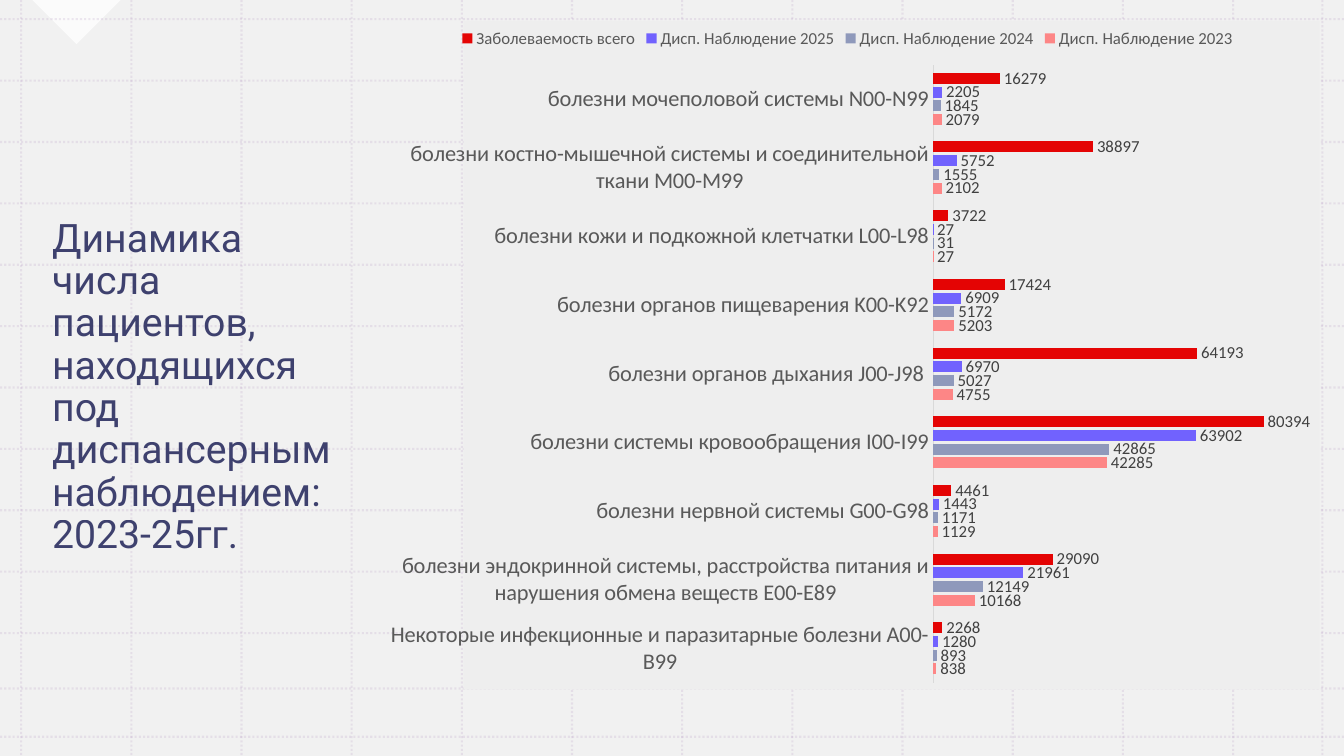
import lxml.etree
import pptx
import pptx.chart.data
import pptx.dml.color
import pptx.enum.chart
import pptx.enum.dml
import pptx.enum.shapes
import pptx.enum.text
import pptx.oxml
import pptx.oxml.ns
import pptx.util

Pt = pptx.util.Pt
qn = pptx.oxml.ns.qn

COLORS = {
    "white": "FFFFFF",
    "panel": "EEEEEE",
    "grid": "B495C2",
    "title": "12154E",
    "axis_text": "595959",
    "label_text": "404040",
    "axis_line": "D9D9D9",
}

CATEGORIES = [
    "Некоторые инфекционные и паразитарные болезни А00-В99",
    "болезни эндокринной системы, расстройства питания и нарушения обмена веществ Е00-Е89",
    "болезни нервной системы G00-G98",
    "болезни системы кровообращения I00-I99",
    "болезни органов дыхания J00-J98 ",
    "болезни органов пищеварения K00-K92",
    "болезни кожи и подкожной клетчатки L00-L98",
    "болезни костно-мышечной системы и соединительной ткани M00-M99",
    "болезни мочеполовой системы N00-N99",
]

SERIES = [
    ("Дисп. Наблюдение 2023", "FD8686", [838, 10168, 1129, 42285, 4755, 5203, 27, 2102, 2079]),
    ("Дисп. Наблюдение 2024", "8F99BB", [893, 12149, 1171, 42865, 5027, 5172, 31, 1555, 1845]),
    ("Дисп. Наблюдение 2025", "7162FE", [1280, 21961, 1443, 63902, 6970, 6909, 27, 5752, 2205]),
    ("Заболеваемость всего", "E40404", [2268, 29090, 4461, 80394, 64193, 17424, 3722, 38897, 16279]),
]

TITLE = "Динамика числа пациентов, находящихся под диспансерным наблюдением:\v2023-25гг."


class SlideBuilder:
    title_font = "Roboto"
    chart_font = "Calibri"

    def __init__(self, slide):
        self.slide = slide

    def color(self, name):
        return pptx.dml.color.RGBColor.from_string(COLORS.get(name, name))

    def set_opacity(self, element, percent):
        for color_element in element.iter(qn("a:srgbClr")):
            alpha = lxml.etree.SubElement(color_element, qn("a:alpha"))
            alpha.set("val", str(percent * 1000))

    def style_font(self, font, name, size, color):
        font.name = name
        font.size = Pt(size)
        font.color.rgb = self.color(color)

    def block(self, left, top, width, height, color, opacity=100, kind="RECTANGLE", rotation=0):
        shape = self.slide.shapes.add_shape(
            pptx.enum.shapes.MSO_SHAPE[kind], Pt(left), Pt(top), Pt(width), Pt(height))
        shape.shadow.inherit = False
        shape.rotation = rotation
        shape.fill.solid()
        shape.fill.fore_color.rgb = self.color(color)
        shape.line.fill.background()
        if opacity < 100:
            self.set_opacity(shape.fill._xPr, opacity)

    def grid_line(self, start_x, start_y, end_x, end_y):
        connector = self.slide.shapes.add_connector(
            pptx.enum.shapes.MSO_CONNECTOR.STRAIGHT,
            Pt(start_x), Pt(start_y), Pt(end_x), Pt(end_y))
        connector.line.width = Pt(1.5)
        connector.line.color.rgb = self.color("grid")
        connector.line.dash_style = pptx.enum.dml.MSO_LINE.ROUND_DOT
        properties = connector._element.spPr
        self.set_opacity(properties, 20)
        lxml.etree.SubElement(properties, qn("a:effectLst"))

    def title(self, left, top, width, height, text):
        shape = self.slide.shapes.add_textbox(Pt(left), Pt(top), Pt(width), Pt(height))
        frame = shape.text_frame
        frame.word_wrap = True
        frame.vertical_anchor = pptx.enum.text.MSO_ANCHOR.MIDDLE
        frame.text = text
        paragraph = frame.paragraphs[0]
        paragraph.line_spacing = 0.9
        for run in paragraph.runs:
            self.style_font(run.font, self.title_font, 28, "title")
        self.set_opacity(paragraph._p, 80)

    def place_plot(self, chart, x, y, w, h):
        plot_area = chart._chartSpace.chart.plotArea
        for old_layout in plot_area.findall(qn("c:layout")):
            plot_area.remove(old_layout)
        layout = lxml.etree.Element(qn("c:layout"))
        manual = lxml.etree.SubElement(layout, qn("c:manualLayout"))
        settings = {"layoutTarget": "inner", "xMode": "edge", "yMode": "edge",
                    "x": x, "y": y, "w": w, "h": h}
        for name, value in settings.items():
            lxml.etree.SubElement(manual, qn("c:" + name)).set("val", str(value))
        plot_area.insert(0, layout)

    def bar_chart(self, left, top, width, height):
        data = pptx.chart.data.CategoryChartData()
        data.categories = CATEGORIES
        for name, _, values in SERIES:
            data.add_series(name, values)
        chart = self.slide.shapes.add_chart(
            pptx.enum.chart.XL_CHART_TYPE.BAR_CLUSTERED,
            Pt(left), Pt(top), Pt(width), Pt(height), data).chart
        self.style_font(chart.font, self.chart_font, 12, "000000")
        chart.has_title = False
        chart.has_legend = True
        chart.legend.position = pptx.enum.chart.XL_LEGEND_POSITION.TOP
        chart.legend.include_in_layout = False
        self.style_font(chart.legend.font, self.chart_font, 12, "axis_text")

        plot = chart.plots[0]
        plot.vary_by_categories = False
        plot.gap_width = 150
        plot.overlap = -25
        for series, (_, color, _) in zip(plot.series, SERIES):
            series.format.fill.solid()
            series.format.fill.fore_color.rgb = self.color(color)
            series.invert_if_negative = False
            labels = series.data_labels
            labels.show_value = True
            labels.position = pptx.enum.chart.XL_LABEL_POSITION.OUTSIDE_END
            self.style_font(labels.font, self.chart_font, 12, "label_text")

        category_axis = chart.category_axis
        category_axis.major_tick_mark = pptx.enum.chart.XL_TICK_MARK.NONE
        category_axis.format.line.color.rgb = self.color("axis_line")
        category_axis.format.line.width = Pt(0.75)
        self.style_font(category_axis.tick_labels.font, self.chart_font, 16, "axis_text")
        value_axis = chart.value_axis
        value_axis.minimum_scale = 0
        value_axis.maximum_scale = 90000
        value_axis.has_major_gridlines = False
        value_axis.visible = False
        self.place_plot(chart, 0.59, 0.07, 0.39, 0.91)


def main():
    presentation = pptx.Presentation()
    presentation.slide_width = Pt(960)
    presentation.slide_height = Pt(540)
    builder = SlideBuilder(presentation.slides.add_slide(presentation.slide_layouts[6]))

    builder.block(0, 0, 960, 540, "white")
    builder.block(0, 0, 960, 540, "panel", opacity=80)
    builder.block(32.4, -22.3, 44.6, 44.6, "white", 75, "RIGHT_TRIANGLE", 315)
    for x in [15.1 + 78.7 * column for column in range(12)] + [944.6]:
        builder.grid_line(x, 0, x, 540)
    for y in [13.7 + 43.85 * row for row in range(11)] + [491.8, 526.3]:
        builder.grid_line(0, y, 960, y)
    builder.title(30.2, 59, 216.7, 435.6, TITLE)
    builder.block(331.2, 15.1, 611.3, 477.4, "panel")
    builder.bar_chart(266.4, 12.2, 678.2, 485.3)
    presentation.save("out.pptx")


if __name__ == "__main__":
    main()
